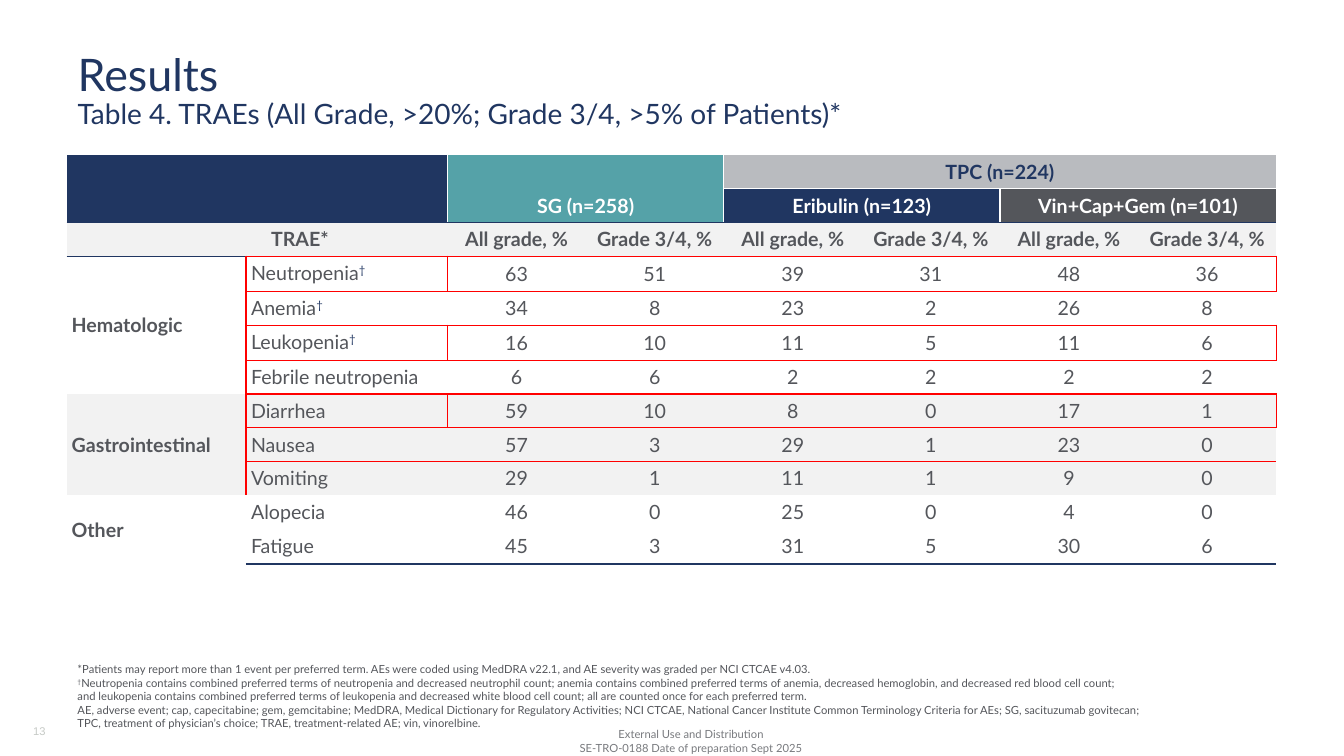
from collections import defaultdict
from dataclasses import dataclass

from lxml.etree import SubElement
from pptx import Presentation
from pptx.dml.color import RGBColor
from pptx.enum.text import MSO_ANCHOR, MSO_AUTO_SIZE, PP_ALIGN
from pptx.oxml.ns import qn
from pptx.util import Pt

PX = 9144
PLAIN = "{2D5ABB26-0587-4C30-8999-92F81FD0307C}"


@dataclass(frozen=True)
class Theme:
    font: str = "Lato"
    plain: str = "Arial"
    navy: str = "203661"
    teal: str = "55A2A8"
    silver: str = "B9BBBF"
    slate: str = "54565B"
    band: str = "F2F2F2"
    white: str = "FFFFFF"
    red: str = "FF0000"
    gray: str = "787A7E"
    pale: str = "C6CAC6"
    title: int = 32
    sub: int = 20
    body: int = 14
    note: int = 8


T = Theme()
WIDTHS = [178, 8, 186] + [137] * 6
GROUPS = [
    ("Hematologic", T.white, [
        ("Neutropenia†", 63, 51, 39, 31, 48, 36),
        ("Anemia†", 34, 8, 23, 2, 26, 8),
        ("Leukopenia†", 16, 10, 11, 5, 11, 6),
        ("Febrile neutropenia", 6, 6, 2, 2, 2, 2),
    ]),
    ("Gastrointestinal", T.band, [
        ("Diarrhea", 59, 10, 8, 0, 17, 1),
        ("Nausea", 57, 3, 29, 1, 23, 0),
        ("Vomiting", 29, 1, 11, 1, 9, 0),
    ]),
    ("Other", T.white, [
        ("Alopecia", 46, 0, 25, 0, 4, 0),
        ("Fatigue", 45, 3, 31, 5, 30, 6),
    ]),
]
BOXED = (3, 5, 7)
TALL = (3, 5, 11)
NOTES = [
    "*Patients may report more than 1 event per preferred term. AEs were coded using MedDRA v22.1, "
    "and AE severity was graded per NCI CTCAE v4.03.\n"
    "†Neutropenia contains combined preferred terms of neutropenia and decreased neutrophil count; "
    "anemia contains combined preferred terms of anemia, decreased hemoglobin, and decreased red blood cell count;\n"
    "and leukopenia contains combined preferred terms of leukopenia and decreased white blood cell count; "
    "all are counted once for each preferred term.",
    "AE, adverse event; cap, capecitabine; gem, gemcitabine; MedDRA, Medical Dictionary for Regulatory Activities; "
    "NCI CTCAE, National Cancer Institute Common Terminology Criteria for AEs; SG, sacituzumab govitecan;\n"
    "TPC, treatment of physician’s choice; TRAE, treatment-related AE; vin, vinorelbine.",
]


def style(font, size, color, bold=False, face=T.font):
    font.name = face
    font.size = Pt(size)
    font.bold = bold
    font.color.rgb = RGBColor.from_string(color)


def write(para, text, mark):
    for num, line in enumerate(text.split("\n")):
        if num:
            para.add_line_break()
        for part in filter(None, line.partition("†")):
            run = para.add_run()
            run.text = part
            if part == "†":
                run.font.color.rgb = RGBColor.from_string(mark)
                run.font._element.set("baseline", "30000")


def add_title(slide):
    shape = slide.shapes.title
    shape.left, shape.top, shape.width, shape.height = [n * PX for n in (67, 15, 1195, 120)]
    frame = shape.text_frame
    frame.auto_size = MSO_AUTO_SIZE.NONE
    frame.vertical_anchor = MSO_ANCHOR.BOTTOM
    para = frame.paragraphs[0]
    para.alignment = PP_ALIGN.LEFT
    para.line_spacing = 0.9
    head = para.add_run()
    head.text = "Results"
    style(head.font, T.title, T.navy)
    para.add_line_break()
    sub = para.add_run()
    sub.text = "Table 4. TRAEs (All Grade, >20%; Grade 3/4, >5% of Patients)*"
    style(sub.font, T.sub, T.navy)


def add_text(slide, area, lines, color, anchor, align=PP_ALIGN.LEFT, face=T.font):
    frame = slide.shapes.add_textbox(*[n * PX for n in area]).text_frame
    frame.word_wrap = True
    frame.vertical_anchor = anchor
    for num, line in enumerate(lines):
        para = frame.add_paragraph() if num else frame.paragraphs[0]
        para.alignment = align
        style(para.font, T.note, color, face=face)
        write(para, line, color)


def fill_cell(cell, text, fill, color=T.slate, bold=False, align=PP_ALIGN.CENTER,
              anchor=MSO_ANCHOR.MIDDLE, left=5):
    cell.fill.solid()
    cell.fill.fore_color.rgb = RGBColor.from_string(fill)
    cell.vertical_anchor = anchor
    cell.margin_left = left * PX
    cell.margin_right = 5 * PX
    cell.margin_top = cell.margin_bottom = 5 * PX if text else 0
    para = cell.text_frame.paragraphs[0]
    para.alignment = align
    style(para.font, T.body, color, bold)
    write(para, text, T.navy)


def plan_lines():
    lines = defaultdict(dict)

    def mark(rows, cols, side, color, width=1):
        for row in rows:
            for col in cols:
                lines[row, col][side] = color, width

    every = range(9)
    for col in (2, 4):
        mark((0, 1), (col,), "R", T.white)
        mark((0, 1), (col + 1,), "L", T.white)
    mark((1,), (6,), "R", T.white)
    mark((1,), (7,), "L", T.white)
    mark((0,), range(5, 9), "B", T.white)
    mark((1,), range(5, 9), "T", T.white)
    mark((1,), every, "B", T.navy)
    mark((2,), every, "T", T.navy)
    mark((11,), every, "B", T.navy, 1.5)
    for row in BOXED:
        span = range(1, 9)
        mark((row,), (1,), "L", T.red)
        mark((row,), (8,), "R", T.red)
        mark((row,), span, "T", T.red)
        mark((row,), span, "B", T.red)
        mark((row - 1,), span, "B", T.red)
        mark((row + 1,), span, "T", T.red)
    return lines


def draw_lines(table):
    for (row, col), sides in plan_lines().items():
        props = table.cell(row, col)._tc.get_or_add_tcPr()
        for side in "LRTB":
            if side in sides:
                color, width = sides[side]
                line = SubElement(props, qn("a:ln" + side), w=str(Pt(width)))
                SubElement(SubElement(line, qn("a:solidFill")), qn("a:srgbClr"), val=color)


def join(table, row, col, high, wide):
    cell = table.cell(row, col)
    cell.merge(table.cell(row + high - 1, col + wide - 1))
    return cell


def fill_head(table):
    for row, col, high, wide, text, fill, color in (
        (0, 0, 2, 3, "", T.navy, T.white),
        (0, 3, 2, 2, "SG (n=258)", T.teal, T.white),
        (0, 5, 1, 4, "TPC (n=224)", T.silver, T.navy),
        (1, 5, 1, 2, "Eribulin (n=123)", T.navy, T.white),
        (1, 7, 1, 2, "Vin+Cap+Gem (n=101)", T.slate, T.white),
    ):
        anchor = MSO_ANCHOR.BOTTOM if high == 2 else MSO_ANCHOR.MIDDLE
        fill_cell(join(table, row, col, high, wide), text, fill, color, True, anchor=anchor)
    fill_cell(join(table, 2, 0, 1, 2), "", T.band)
    fill_cell(table.cell(2, 2), "TRAE*", T.band, bold=True, align=PP_ALIGN.LEFT, left=11)
    for col in range(3, 9):
        text = "All grade, %" if col % 2 else "Grade 3/4, %"
        fill_cell(table.cell(2, col), text, T.band, bold=True)


def fill_body(table):
    row = 3
    for group, fill, terms in GROUPS:
        fill_cell(join(table, row, 0, len(terms), 1), group, fill, bold=True, align=PP_ALIGN.LEFT)
        for name, *counts in terms:
            fill_cell(join(table, row, 1, 1, 2), name, fill, align=PP_ALIGN.LEFT, anchor=MSO_ANCHOR.TOP)
            for col, count in enumerate(counts, 3):
                fill_cell(table.cell(row, col), str(count), fill)
            row += 1


def add_grid(slide):
    high = [35 if row in TALL else 33 for row in range(12)]
    area = (66, 154, sum(WIDTHS), sum(high))
    table = slide.shapes.add_table(12, 9, *[n * PX for n in area]).table
    table.first_row = table.horz_banding = False
    table._tbl.tblPr.find(qn("a:tableStyleId")).text = PLAIN
    for col, width in zip(table.columns, WIDTHS):
        col.width = width * PX
    for row, height in zip(table.rows, high):
        row.height = height * PX
    draw_lines(table)
    fill_head(table)
    fill_body(table)


def main():
    deck = Presentation()
    deck.slide_width, deck.slide_height = 1333 * PX, 750 * PX
    slide = deck.slides.add_slide(deck.slide_layouts[5])
    add_title(slide)
    add_grid(slide)
    add_text(slide, (67, 652, 1192, 77), NOTES, T.slate, MSO_ANCHOR.BOTTOM)
    add_text(slide, (23, 705, 60, 32), ["13"], T.pale, MSO_ANCHOR.BOTTOM, face=T.plain)
    add_text(slide, (514, 719, 343, 32),
             ["External Use and Distribution", "SE-TRO-0188 Date of preparation Sept 2025"],
             T.gray, MSO_ANCHOR.MIDDLE, PP_ALIGN.CENTER)
    deck.save("out.pptx")


if __name__ == "__main__":
    main()
